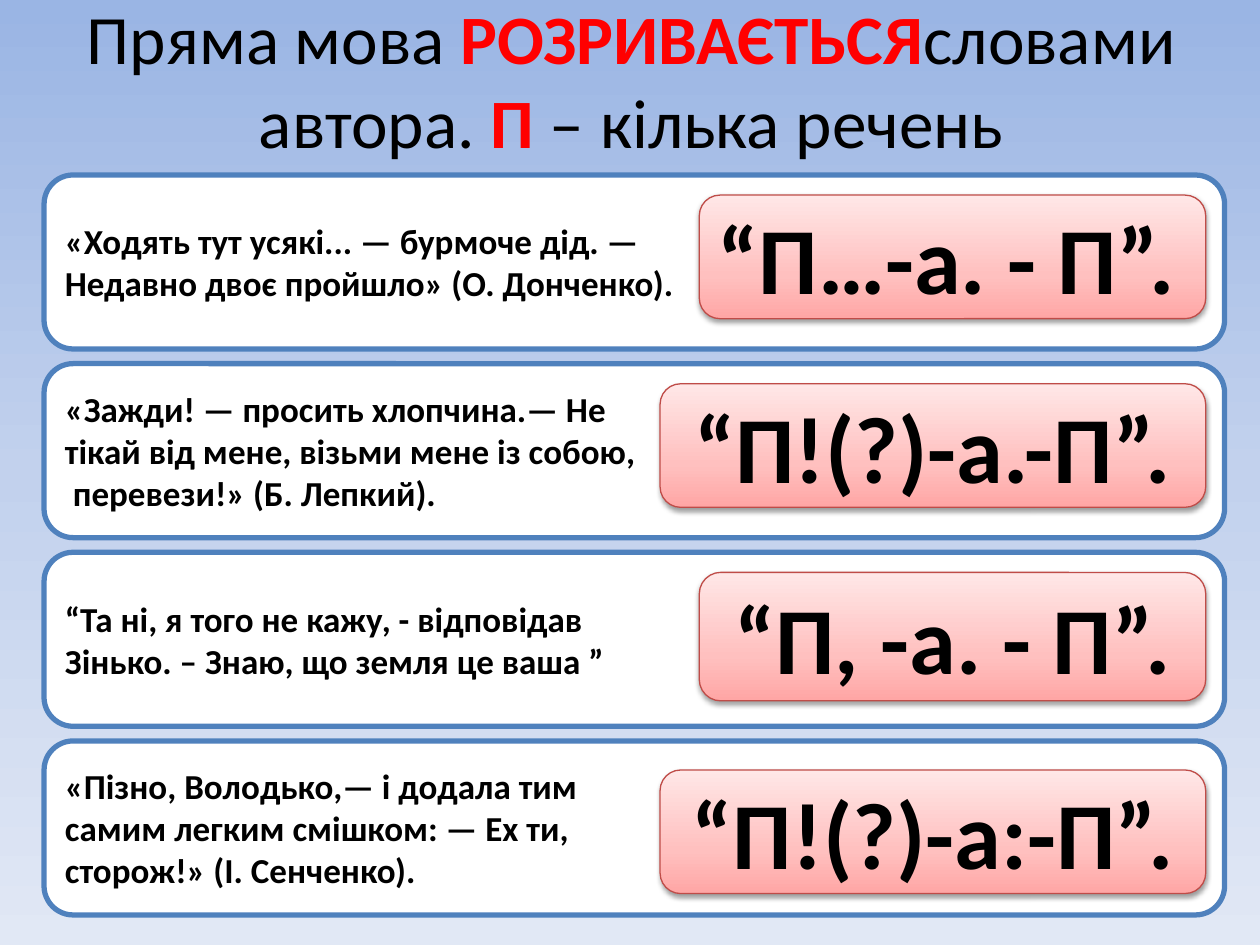
from lxml import etree
from pptx import Presentation
from pptx.dml.color import RGBColor
from pptx.enum.shapes import MSO_SHAPE
from pptx.enum.text import MSO_ANCHOR, MSO_AUTO_SIZE, PP_ALIGN
from pptx.oxml.ns import qn
from pptx.util import Pt

ROUNDED = MSO_SHAPE.ROUNDED_RECTANGLE
MIDDLE = MSO_ANCHOR.MIDDLE
LEFT, CENTER = PP_ALIGN.LEFT, PP_ALIGN.CENTER
NO_FIT = MSO_AUTO_SIZE.NONE

BLACK = RGBColor(0x00, 0x00, 0x00)
WHITE = RGBColor(0xFF, 0xFF, 0xFF)
RED = RGBColor(0xFF, 0x00, 0x00)
BLUE = RGBColor(0x4F, 0x81, 0xBD)
DARK_RED = RGBColor(0xBF, 0x4C, 0x48)
SKY_STOPS = [
    (0, RGBColor(0x9A, 0xB5, 0xE4)),
    (50, RGBColor(0xC2, 0xD1, 0xED)),
    (100, RGBColor(0xE1, 0xE8, 0xF5)),
]
PINK_STOPS = [
    (0, RGBColor(0xFF, 0xA6, 0xA5)),
    (35, RGBColor(0xFF, 0xC0, 0xBF)),
    (100, RGBColor(0xFF, 0xE7, 0xE7)),
]

TITLE_FONT = {"name": "Calibri", "size": Pt(39.6)}
QUOTE_FONT = {"name": "Calibri", "size": Pt(20), "bold": True}
SCHEME_FONT = {"name": "Calibri", "size": Pt(54), "bold": True}

TITLE_BOX = (36.7, 0, 648, 90)
TITLE_SPANS = [
    ("Пряма мова ", False),
    ("РОЗРИВАЄТЬСЯ", True),
    ("словами автора. ", False),
    ("П", True),
    (" – кілька речень", False),
]

CARD_LEFT, CARD_TOP, CARD_WIDTH, CARD_HEIGHT = 25.2, 100, 674.6, 99.4
CARD_PITCH = 107.8
SCHEME_RIGHT_GAP = 10.8
NARROW, WIDE = 289.4, 311.8

ROWS = [
    (["«Ходять тут усякі... — бурмоче дід. —",
      "Недавно двоє пройшло» (О. Донченко)."],
     "“П…-а. - П”.", LEFT, NARROW, 11.5, 70.6),
    (["«Зажди! — просить хлопчина.— Не",
      "тікай від мене, візьми мене із собою,",
      " перевези!» (Б. Лепкий)."],
     "“П!(?)-а.-П”.", CENTER, WIDE, 11.5, 70.6),
    (["“Та ні, я того не кажу, - відповідав",
      "Зінько. – Знаю, що земля це ваша ”"],
     "“П, -а. - П”.", CENTER, NARROW, 11.5, 73.4),
    (["«Пізно, Володько,— і додала тим",
      "самим легким смішком: — Ех ти,",
      "сторож!» (І. Сенченко)."],
     "“П!(?)-а:-П”.", CENTER, WIDE, 16.6, 70.6),
]


def add_child(parent, tag, **attributes):
    return etree.SubElement(parent, qn(tag), attributes)


def set_gradient(fill, owner, stops, angle):
    fill.gradient()
    gradient = owner.find(".//" + qn("a:gradFill"))
    for child in list(gradient):
        gradient.remove(child)
    stop_list = add_child(gradient, "a:gsLst")
    for position, color in stops:
        stop = add_child(stop_list, "a:gs", pos=str(position * 1000))
        add_child(stop, "a:srgbClr", val=str(color))
    add_child(gradient, "a:lin", ang=str(angle * 60000), scaled="0")


def add_shadow(shape):
    effects = shape._element.spPr.find(qn("a:effectLst"))
    shadow = add_child(effects, "a:outerShdw", blurRad=str(Pt(3.1)),
                       dist=str(Pt(1.6)), dir="5400000", rotWithShape="0")
    color = add_child(shadow, "a:srgbClr", val=str(BLACK))
    add_child(color, "a:alpha", val="38000")


def add_span(para, text, font, color=BLACK):
    span = para.add_run()
    span.text = text
    for name, value in font.items():
        setattr(span.font, name, value)
    span.font.color.rgb = color


def add_rounded(page, box, lines, font, align, line_color, line_width):
    shape = page.shapes.add_shape(ROUNDED, *map(Pt, box))
    shape.shadow.inherit = False
    shape.line.color.rgb = line_color
    shape.line.width = Pt(line_width)
    frame = shape.text_frame
    frame.word_wrap = True
    frame.vertical_anchor = MIDDLE
    for index, text in enumerate(lines):
        para = frame.add_paragraph() if index else frame.paragraphs[0]
        para.alignment = align
        add_span(para, text, font)
    return shape


def place_title(page, box):
    title = page.shapes.title
    title.left, title.top, title.width, title.height = map(Pt, box)
    frame = title.text_frame
    frame.word_wrap = True
    frame.auto_size = NO_FIT
    frame.vertical_anchor = MIDDLE
    para = frame.paragraphs[0]
    para.alignment = CENTER
    for text, strong in TITLE_SPANS:
        add_span(para, text, {**TITLE_FONT, "bold": strong},
                 RED if strong else BLACK)


def place_row(page, box, row):
    left, top, width, height = box
    quote, scheme, align, scheme_width, drop, scheme_height = row
    card = add_rounded(page, box, quote, QUOTE_FONT, LEFT, BLUE, 3)
    card.fill.solid()
    card.fill.fore_color.rgb = WHITE
    scheme_left = left + width - SCHEME_RIGHT_GAP - scheme_width
    scheme_box = (scheme_left, top + drop, scheme_width, scheme_height)
    pill = add_rounded(page, scheme_box, [scheme], SCHEME_FONT, align,
                       DARK_RED, 0.75)
    set_gradient(pill.fill, pill._element, PINK_STOPS, 270)
    add_shadow(pill)


def main():
    deck = Presentation()
    deck.slide_width, deck.slide_height = Pt(720), Pt(540)
    page = deck.slides.add_slide(deck.slide_layouts.get_by_name("Title Only"))
    set_gradient(page.background.fill, page._element, SKY_STOPS, 90)
    place_title(page, TITLE_BOX)
    for index, row in enumerate(ROWS):
        top = CARD_TOP + index * CARD_PITCH
        place_row(page, (CARD_LEFT, top, CARD_WIDTH, CARD_HEIGHT), row)
    deck.save("out.pptx")


if __name__ == "__main__":
    main()
